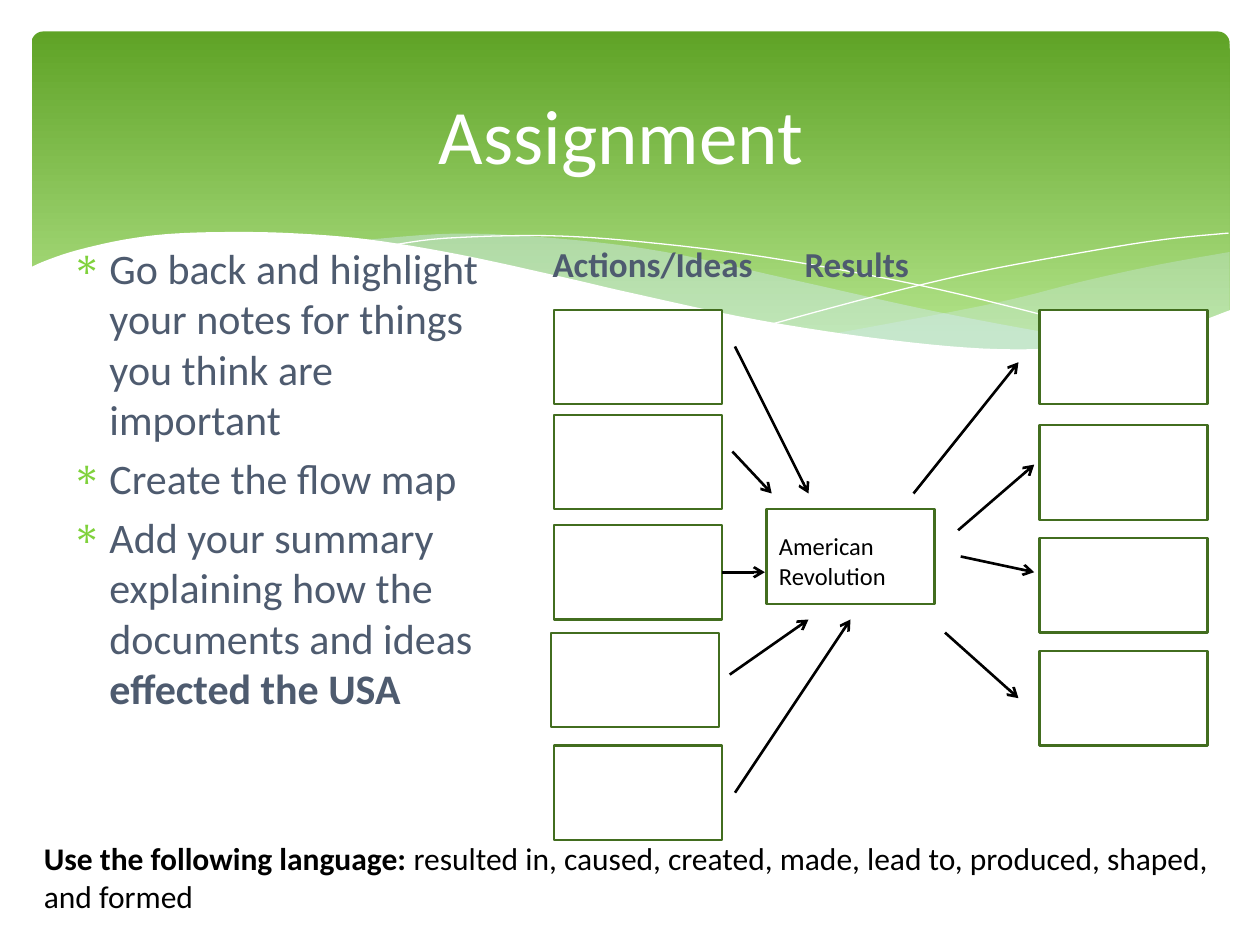
from lxml.etree import SubElement
from pptx import Presentation
from pptx.dml.color import RGBColor
from pptx.enum.shapes import MSO_CONNECTOR, MSO_SHAPE
from pptx.enum.text import MSO_ANCHOR, PP_ALIGN
from pptx.oxml.ns import qn
from pptx.util import Emu, Inches, Pt

COLUMNS, ROWS = 240, 180
CELL = Inches(10) / COLUMNS
FONT = "Calibri"
WHITE = RGBColor(0xFF, 0xFF, 0xFF)
BLACK = RGBColor(0x00, 0x00, 0x00)
SLATE = RGBColor(0x4E, 0x5B, 0x6F)
DEEP_GREEN = RGBColor(0x5F, 0xA3, 0x26)
PALE_GREEN = RGBColor(0xB2, 0xE3, 0x89)
BOX_GREEN = RGBColor(0x42, 0x6D, 0x1F)
BULLET_GREEN = RGBColor(0x7F, 0xD1, 0x3B)
PALE_BLUE = RGBColor(0xD6, 0xEC, 0xFF)

BOX_SIZE = (32, 18)
ACTION_BOXES = [(105.5, 59), (105.5, 79), (105.5, 100), (105, 120.5), (105.5, 142)]
RESULT_BOXES = [(198, row) for row in (59, 81, 102.5, 124)]
EVENT_BOX = (146, 97)
ARROWS = [
    ((140, 66), (154, 94)), ((174, 94), (194, 69)), ((180, 120.5), (194, 133)),
    ((183, 106), (197, 109)), ((182.5, 101), (197, 88.5)), ((140, 151), (162, 118)),
    ((139, 128.5), (154, 118)), ((139.5, 86), (147, 94)),
]

RIGHT_WAVE_TOP = [(234.2, 48), (220.8, 50.4), (206.6, 53.5), (193.2, 56.9),
                  (180.7, 59.5), (158.6, 63.6)]
RIGHT_WAVE_BASE = [(158.6, 63.6), (172.6, 65.3), (192.7, 66.7), (211.4, 65.5),
                   (224.4, 62.9), (234.2, 59.3)]
LONG_WAVE_TOP = [(68.6, 45.8), (86.6, 44.5), (106, 45.4), (126.7, 48), (151, 53.3),
                 (178, 59.3), (200.9, 63.6), (214.3, 65.5)]
LONG_WAVE_BASE = [(214.3, 65.5), (203.5, 66.5), (188.4, 66.7), (170.2, 65.3),
                  (148.3, 61.9), (127.2, 57.6), (107.8, 53.3), (91.9, 49.7),
                  (77.5, 47), (68.6, 45.8)]
FALLING_LINE = [(74.2, 46.8), (84.7, 45.4), (103.9, 44.9), (122.4, 46.1), (145.9, 49),
                (174.5, 54.2), (199.4, 60.2), (217.7, 65.3)]
RISING_LINE = [(147.1, 61.7), (166.8, 56.4), (186.2, 51.8), (207.8, 47.8),
               (221.8, 45.6), (234, 44.4)]
BANNER_EDGE = [(234.5, 59), (223.2, 62.9), (207.1, 65.8), (190.3, 66.5), (169.9, 64.8),
               (144.7, 61), (120.7, 55.9), (107.3, 52.8), (87.6, 48.5), (70.1, 45.6),
               (55.2, 44.4), (42.5, 44.2), (31.7, 44.6), (22.8, 45.8), (14.2, 47.8),
               (8.6, 49.7), (5.5, 51.1)]
BANNER_CORNERS = [(5.5, 79), (234.5, 79)]


def cells(*counts):
    return [Emu(round(count * CELL)) for count in counts]


def smooth_curve(knots, steps=6):
    padded = [knots[0], *knots, knots[-1]]
    curve = [knots[0]]
    for before, start, end, after in zip(padded, padded[1:], padded[2:], padded[3:]):
        for step in range(1, steps + 1):
            t = step / steps
            curve.append(tuple(
                b + ((c - a) * t + (2 * a - 5 * b + 4 * c - d) * t ** 2
                     + (3 * b - a - 3 * c + d) * t ** 3) / 2
                for a, b, c, d in zip(before, start, end, after)))
    return curve


def add_outline(slide, points, closed):
    start, *rest = [cells(*point) for point in points]
    builder = slide.shapes.build_freeform(*start)
    builder.add_line_segments(rest, close=closed)
    outline = builder.convert_to_shape()
    outline.shadow.inherit = False
    return outline


def add_wave(slide, points, color, opacity=100):
    wave = add_outline(slide, points, True)
    wave.fill.solid()
    wave.fill.fore_color.rgb = color
    wave.line.fill.background()
    if opacity < 100:
        tint = wave.fill._xPr.find(qn("a:solidFill"))[0]
        SubElement(tint, qn("a:alpha"), val=str(opacity * 1000))


def add_hairline(slide, knots):
    hairline = add_outline(slide, smooth_curve(knots), False)
    hairline.fill.background()
    hairline.line.color.rgb = WHITE
    hairline.line.width = Pt(0)


def add_banner(slide):
    banner = slide.shapes.add_shape(MSO_SHAPE.ROUNDED_RECTANGLE, *cells(6, 6, 228.2, 64.8))
    banner.adjustments[0] = 0.034
    banner.shadow.inherit = False
    banner.line.fill.background()
    banner.fill.gradient()
    banner.fill.gradient_angle = 270
    for stop, position, color in zip(banner.fill.gradient_stops, (0, 0.9),
                                     (DEEP_GREEN, PALE_GREEN)):
        stop.position = position
        stop.color.rgb = color
    add_wave(slide, smooth_curve(RIGHT_WAVE_TOP) + smooth_curve(RIGHT_WAVE_BASE),
             PALE_BLUE, 29)
    add_wave(slide, smooth_curve(LONG_WAVE_TOP) + smooth_curve(LONG_WAVE_BASE),
             PALE_BLUE, 40)
    add_hairline(slide, FALLING_LINE)
    add_hairline(slide, RISING_LINE)
    add_wave(slide, smooth_curve(BANNER_EDGE) + BANNER_CORNERS, WHITE)


def style(paragraph, size, color):
    paragraph.font.name = FONT
    paragraph.font.size = Pt(size)
    paragraph.font.color.rgb = color


def place_title(slide, wording):
    title = slide.shapes.title
    title.left, title.top, title.width, title.height = cells(12, 9, 216, 33)
    title.text_frame.text = wording
    title.text_frame.vertical_anchor = MSO_ANCHOR.MIDDLE
    heading = title.text_frame.paragraphs[0]
    heading.alignment = PP_ALIGN.CENTER
    style(heading, 44, WHITE)
    slide.shapes._spTree.append(title._element)


def add_text(slide, area, paragraphs, size, color):
    frame = slide.shapes.add_textbox(*cells(*area)).text_frame
    frame.word_wrap = True
    for index, runs in enumerate(paragraphs):
        paragraph = frame.paragraphs[0] if index == 0 else frame.add_paragraph()
        style(paragraph, size, color)
        for wording, bold in runs:
            run = paragraph.add_run()
            run.text = wording
            run.font.bold = bold
    return frame.paragraphs


def add_bullet(paragraph):
    paragraph.space_before = Pt(4.8)
    properties = paragraph._p.get_or_add_pPr()
    properties.set("marL", str(Inches(0.3)))
    properties.set("indent", str(-Inches(0.3)))
    tint = SubElement(properties, qn("a:buClr"))
    SubElement(tint, qn("a:srgbClr"), val=str(BULLET_GREEN))
    SubElement(properties, qn("a:buChar"), char="∗")


def set_column_tab(paragraph, margin, position):
    paragraph.space_before = Pt(4)
    properties = paragraph._p.get_or_add_pPr()
    properties.set("marL", str(Inches(margin)))
    properties.set("indent", "0")
    tabs = SubElement(properties, qn("a:tabLst"))
    SubElement(tabs, qn("a:tab"), pos=str(Inches(position)), algn="l")


def add_box(slide, corner):
    box = slide.shapes.add_shape(MSO_SHAPE.RECTANGLE, *cells(*corner, *BOX_SIZE))
    box.shadow.inherit = False
    box.fill.solid()
    box.fill.fore_color.rgb = WHITE
    box.line.color.rgb = BOX_GREEN
    box.line.width = Pt(1.25)
    return box


def add_arrow(slide, start, end):
    arrow = slide.shapes.add_connector(MSO_CONNECTOR.STRAIGHT, *cells(*start, *end))
    arrow.line.color.rgb = BLACK
    arrow.line.width = Pt(1.5)
    SubElement(arrow.line._get_or_add_ln(), qn("a:tailEnd"), type="arrow")
    SubElement(arrow._element.spPr, qn("a:effectLst"))
    return arrow


def main():
    deck = Presentation()
    deck.slide_width, deck.slide_height = cells(COLUMNS, ROWS)
    slide = deck.slides.add_slide(deck.slide_layouts[5])
    add_banner(slide)
    place_title(slide, "Assignment ")
    tasks = add_text(slide, (11.3, 45, 84.7, 111), [
        [("Go back and highlight your notes for things you think are important", False)],
        [("Create the flow map", False)],
        [("Add your summary explaining how the documents and ideas ", False),
         ("effected the USA", True)],
    ], 24, SLATE)
    for task in tasks:
        add_bullet(task)
    headings = add_text(slide, (100, 45, 128, 115.7),
                        [[("Actions/Ideas\tResults", True)]], 20, SLATE)
    set_column_tab(headings[0], 0.12, 3.47)

    actions = [add_box(slide, corner) for corner in ACTION_BOXES]
    add_box(slide, EVENT_BOX)
    add_text(slide, (146, 100, 32, 13.7), [[("American Revolution", False)]], 14, BLACK)
    for corner in RESULT_BOXES:
        add_box(slide, corner)
    for start, end in ARROWS:
        add_arrow(slide, start, end)
    add_arrow(slide, (137.5, 109), (145.7, 109)).begin_connect(actions[2], 3)
    add_text(slide, (6, 158.6, 234, 17), [[
        ("Use the following language: ", True),
        ("resulted in, caused, created, made, lead to, produced, shaped, and formed", False),
    ]], 18, BLACK)
    deck.save("out.pptx")


if __name__ == "__main__":
    main()
